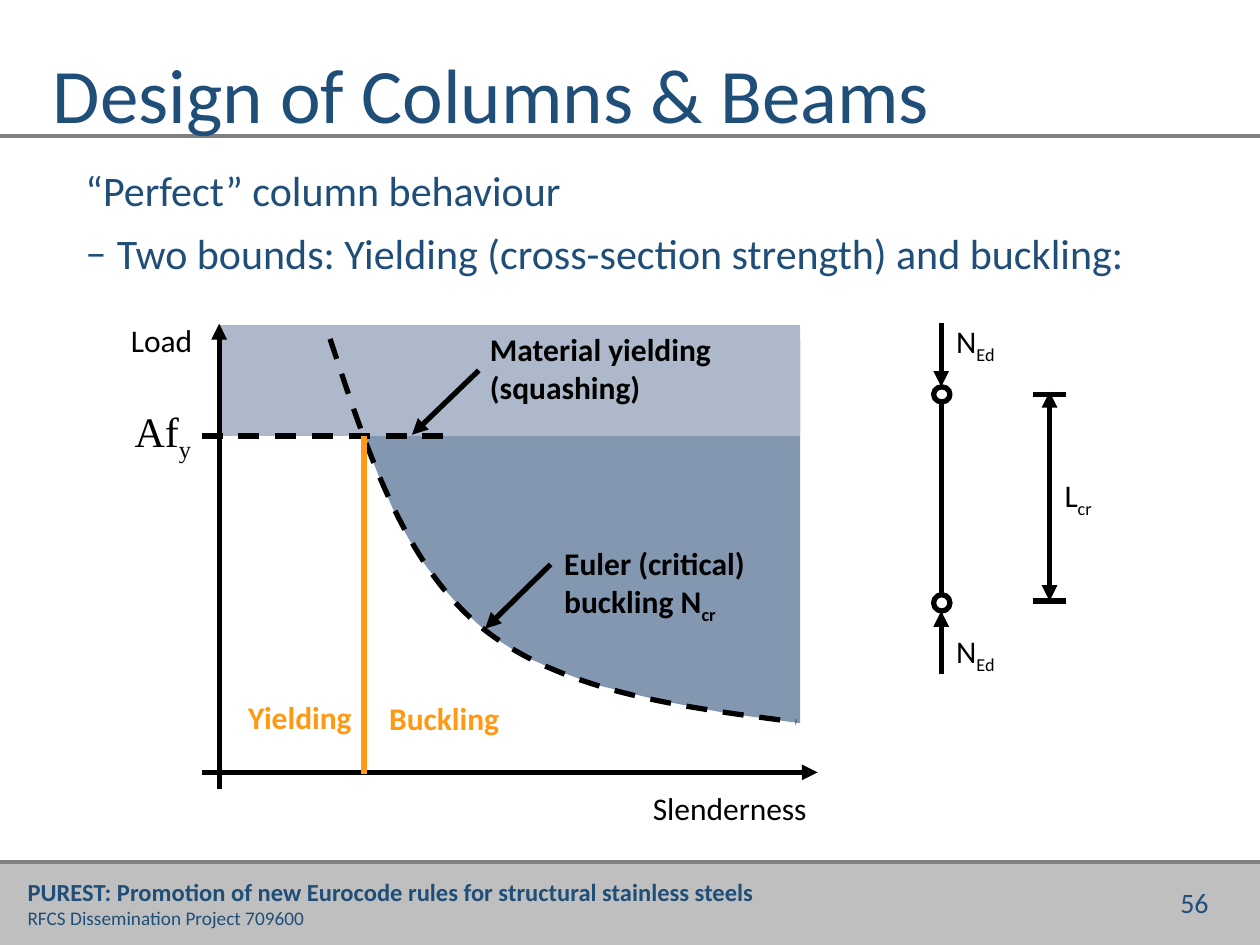
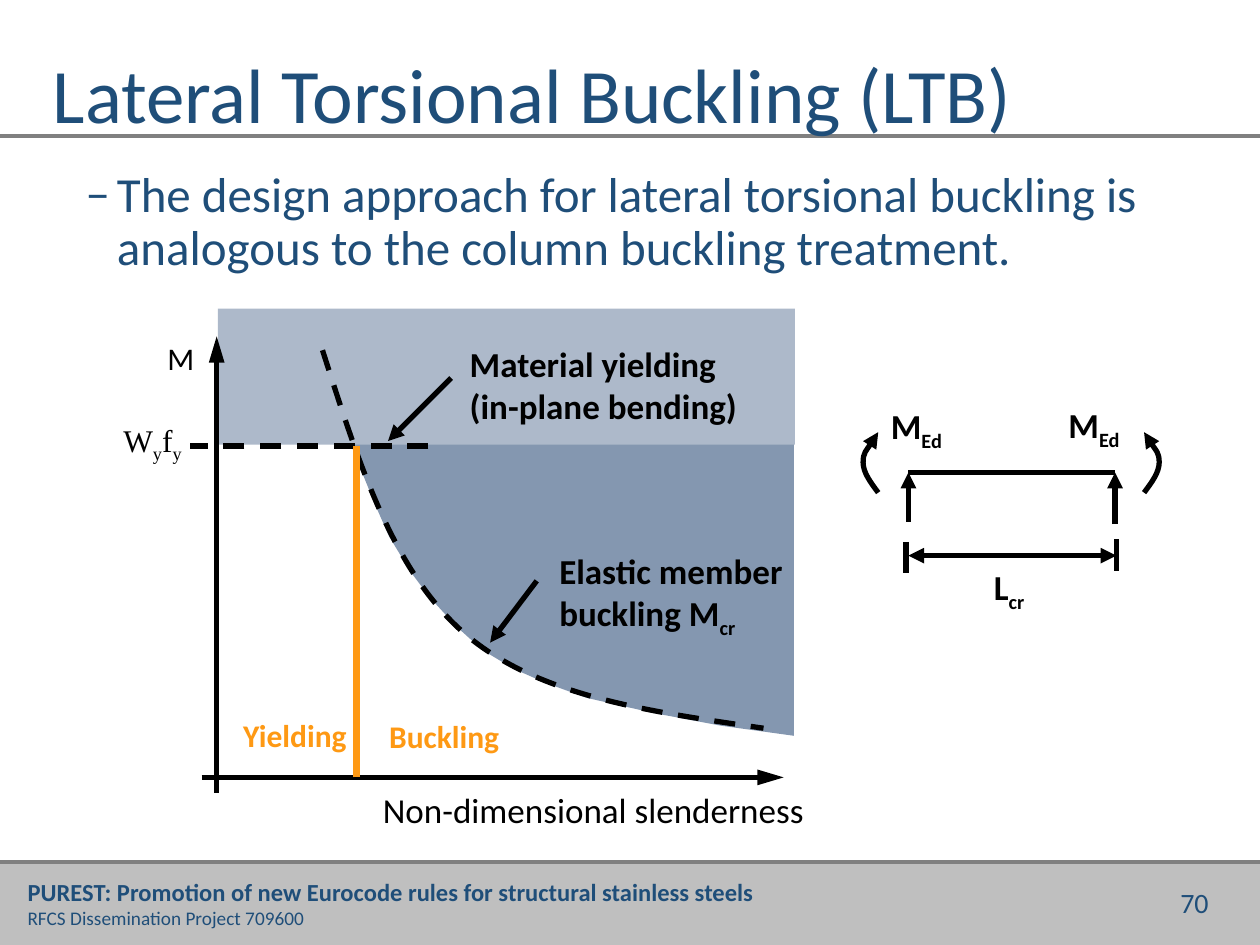
"""Builds two slides on the buckling of columns and beams."""
from pptx import Presentation
from pptx import util as u
from pptx.dml.color import RGBColor
from pptx.enum import dml, shapes, text
from pptx.oxml.ns import qn
from lxml import etree

HUE = {"navy": "1F4E79", "band": "BFBFBF", "rule": "808080", "ink": "000000",
       "deep": "8497B0", "pale": "ADB9CA", "gold": "FE9914"}
LEFT, MID, RIGHT = text.PP_ALIGN.LEFT, text.PP_ALIGN.CENTER, text.PP_ALIGN.RIGHT
SERIF = "Times New Roman"


def say(sl, at, *rows, hue="ink", face="Calibri", side=LEFT, pad=True, wrap=True):
    """Adds a text box; each row is (text, size, bold) and | toggles subscript."""
    frame = sl.shapes.add_textbox(*map(u.Inches, at)).text_frame
    frame.word_wrap = wrap
    if not pad:
        frame.margin_left = frame.margin_top = frame.margin_right = frame.margin_bottom = 0
    for i, (words, size, bold) in enumerate(rows):
        para = frame.add_paragraph() if i else frame.paragraphs[0]
        para.alignment = side
        for j, part in enumerate(words.split("|")):
            run = para.add_run()
            run.text = part
            font = run.font
            font.name, font.size, font.bold = face, u.Pt(size), bold
            font.color.rgb = RGBColor.from_string(HUE[hue])
            if j % 2:
                run._r.get_or_add_rPr().set("baseline", "-25000")
    return frame


def ink(shape, hue="ink", wide=3, kind=""):
    """Styles a line; in kind, - is dashed, < and > are arrowheads, + makes them long."""
    shape.line.color.rgb = RGBColor.from_string(HUE[hue])
    shape.line.width = u.Pt(wide)
    if "-" in kind:
        shape.line.dash_style = dml.MSO_LINE.DASH
    for mark, tag in (("<", "a:headEnd"), (">", "a:tailEnd")):
        if mark in kind:
            etree.SubElement(shape.line._get_or_add_ln(), qn(tag), type="triangle",
                             len="lg" if "+" in kind else "med")
    etree.SubElement(shape._element.spPr, qn("a:effectLst"))


COLUMN = {
    "title": "Design of Columns & Beams", "page": "56", "size": 24, "tall": 1.08,
    "body": [("“Perfect” column behaviour", False),
             ("Two bounds: Yielding (cross-section strength) and buckling:", True)],
    "area": [(2.63, 2.71), (6.35, 2.7), (6.35, 5.74), (5.76, 5.66), (5.24, 5.56),
             (4.71, 5.43), (4.39, 5.31), (4.14, 5.2), (3.89, 5.04), (3.68, 4.85),
             (3.47, 4.61), (3.32, 4.41), (3.15, 4.11), (3.04, 3.86), (2.93, 3.59),
             (2.83, 3.32), (2.74, 3.04)],
    "shade": (1.74, 2.58, 4.61, 0.88),
    "lines": [(1.74, 6.26, 1.74, 2.57, ">"), (1.6, 6.13, 6.49, 6.13, ">"),
              (1.6, 3.46, 3.58, 3.46, "-"), (3.8, 2.94, 3.27, 3.45, ">"),
              (4.37, 4.48, 3.85, 4.99, ">"), (7.47, 3.19, 7.47, 4.72, ""),
              (7.47, 2.56, 7.47, 3.07, ">"), (7.47, 5.35, 7.47, 4.85, ">"),
              (8.2, 3.13, 8.46, 3.13, ""), (8.2, 4.77, 8.46, 4.77, ""),
              (8.33, 3.11, 8.33, 4.77, "<>")],
    "curves": [("-", [(2.62, 2.69), (2.91, 3.57), (3.2, 4.46), (3.81, 4.97),
                      (4.43, 5.48), (5.37, 5.61), (6.32, 5.73)])],
    "pins": [(7.41, 3.07, 0.13, 0.12), (7.41, 4.72, 0.13, 0.13)],
    "notes": [((0.97, 3.17, 0.85, 0.76), "Af|y", 24, False, {"face": SERIF}),
              ((3.53, 6.21, 4.58, 0.51), "Slenderness ", 18, False, {"side": MID}),
              ((3.79, 2.57, 2.38, 0.63), "Material yielding (squashing)", 18, True, {}),
              ((4.38, 4.27, 1.93, 0.64), "Euler (critical) buckling N|cr", 18, True, {}),
              ((7.49, 2.51, 0.83, 0.64), "N|Ed", 18, False, {}),
              ((7.49, 4.97, 0.8, 0.64), "N|Ed", 18, False, {}),
              ((8.35, 3.73, 0.69, 0.63), "L|cr", 18, False, {}),
              ((0.94, 2.5, 0.85, 0.76), "Load", 18, False, {})],
    "split": (2.89, 3.46, 6.14, 3.5), "zones": (1.6, 5.49),
}
BEAM = {
    "title": "Lateral Torsional Buckling (LTB)", "page": "70", "size": 28, "tall": 5.28,
    "body": [("The design approach for lateral torsional buckling is "
              "analogous to the column buckling treatment.", True)],
    "area": [(2.56, 2.89), (6.3, 2.88), (6.3, 5.84), (5.72, 5.76), (5.19, 5.66),
             (4.66, 5.54), (4.33, 5.42), (4.08, 5.31), (3.83, 5.16), (3.62, 4.97),
             (3.41, 4.74), (3.26, 4.54), (3.09, 4.26), (2.98, 4.01), (2.87, 3.74),
             (2.77, 3.49), (2.67, 3.22)],
    "shade": (1.73, 2.45, 4.58, 1.08),
    "lines": [(1.72, 6.29, 1.72, 2.67, ">+"), (1.6, 6.17, 6.22, 6.17, ">+"),
              (3.4, 3.54, 1.51, 3.54, "-"), (3.58, 3, 3.08, 3.5, ">"),
              (4.26, 4.61, 3.89, 5.1, ">"), (7.21, 3.75, 8.85, 3.75, ""),
              (7.21, 4.14, 7.21, 3.75, ">"), (8.85, 4.16, 8.85, 3.75, ">"),
              (7.19, 4.3, 7.19, 4.55, ""), (7.21, 4.41, 8.86, 4.41, "<>"),
              (8.86, 4.28, 8.86, 4.53, "")],
    "curves": [("-", [(2.56, 2.78), (2.84, 3.65), (3.11, 4.53), (3.69, 5.03),
                      (4.27, 5.53), (5.17, 5.65), (6.06, 5.78)])]
              + [(">", [(x, 3.91), (x + d / 2, 3.83), (x + d, 3.75), (x + d, 3.67),
                        (x + d, 3.59), (x + d / 6, 3.47), (x, 3.43)])
                 for x, d in ((6.97, -0.12), (9.08, 0.12))],
    "pins": [],
    "notes": [((1.23, 2.64, 1.15, 0.4), "M", 18, False, {}),
              ((0.88, 3.29, 0.89, 0.75), "W|y|f|y", 18, False, {"face": SERIF}),
              ((3.63, 2.67, 2.4, 0.63), "Material yielding (in-plane bending)", 20, True, {}),
              ((4.34, 4.31, 2.09, 0.63), "Elastic member buckling M|cr", 20, True, {}),
              ((7.79, 4.44, 0.66, 0.63), "L|cr", 20, True, {}),
              ((7.07, 3.21, 0.55, 0.48), "M|Ed", 20, True, {"pad": False}),
              ((8.48, 3.2, 0.47, 0.48), "M|Ed", 20, True, {"pad": False}),
              ((2.94, 6.21, 4.4, 0.5), "Non-dimensional slenderness", 20, False, {})],
    "split": (2.83, 3.54, 6.17, 3.75), "zones": (1.56, 5.63),
}

deck = Presentation()
deck.slide_width, deck.slide_height = u.Inches(10), u.Inches(7.5)

for plan in (COLUMN, BEAM):
    sl = deck.slides.add_slide(deck.slide_layouts[6])
    draw = sl.shapes

    band = draw.add_shape(shapes.MSO_SHAPE.RECTANGLE, *map(u.Inches, (0, 6.84, 10, 0.66)))
    band.fill.solid()
    band.fill.fore_color.rgb = RGBColor.from_string(HUE["band"])
    ink(band, "band", 1)
    for y in (6.84, 1.08):
        ink(draw.add_connector(shapes.MSO_CONNECTOR.STRAIGHT,
                               *map(u.Inches, (0, y, 10, y))), "rule", 2)
    say(sl, (0.12, 6.91, 6.01, 0.52),
        ("PUREST: Promotion of new Eurocode rules for structural stainless steels", 14, True),
        ("RFCS Dissemination Project 709600", 11, False), hue="navy", wrap=False)
    say(sl, (7.44, 6.98, 2.25, 0.4), (plan["page"], 16, False), hue="navy", side=RIGHT)
    head = say(sl, (0.32, 0.4, 9.35, 0.68), (plan["title"], 44, False), hue="navy")
    head.paragraphs[0].line_spacing = 0.9

    body = say(sl, (0.58, 1.3, 8.85, plan["tall"]),
               *[(words, plan["size"], False) for words, _ in plan["body"]], hue="navy")
    for para, (_, dash) in zip(body.paragraphs, plan["body"]):
        para.line_spacing, para.space_before = 0.9, u.Pt(10)
        if dash:
            prop = para._p.get_or_add_pPr()
            prop.set("marL", str(u.Inches(0.25)))
            prop.set("indent", str(u.Inches(-0.25)))
            etree.SubElement(prop, qn("a:buFont"), typeface="Calibri")
            etree.SubElement(prop, qn("a:buChar"), char="‒")

    spots = [(u.Inches(x), u.Inches(y)) for x, y in plan["area"]]
    pen = draw.build_freeform(*spots[0])
    pen.add_line_segments(spots[1:], close=True)
    area = pen.convert_to_shape()
    shade = draw.add_shape(shapes.MSO_SHAPE.RECTANGLE, *map(u.Inches, plan["shade"]))
    for zone, hue in ((area, "deep"), (shade, "pale")):
        zone.fill.solid()
        zone.fill.fore_color.rgb = RGBColor.from_string(HUE[hue])
        zone.line.fill.background()
        zone.shadow.inherit = False

    for *ends, kind in plan["lines"]:
        ink(draw.add_connector(shapes.MSO_CONNECTOR.STRAIGHT, *map(u.Inches, ends)), kind=kind)

    for kind, knots in plan["curves"]:
        spots = [(u.Inches(x), u.Inches(y)) for x, y in knots]
        pen = draw.build_freeform(*spots[0])
        pen.add_line_segments(spots[1:], close=False)
        curve = pen.convert_to_shape()
        legs = list(curve._element.iter(qn("a:lnTo")))
        for i in range(0, len(legs), 3):
            bend = etree.SubElement(legs[i].getparent(), qn("a:cubicBezTo"))
            for leg in legs[i:i + 3]:
                bend.append(leg[0])
                leg.getparent().remove(leg)
        curve.fill.background()
        ink(curve, kind=kind)

    for at in plan["pins"]:
        pin = draw.add_shape(shapes.MSO_SHAPE.OVAL, *map(u.Inches, at))
        pin.fill.background()
        ink(pin)

    for at, words, size, bold, more in plan["notes"]:
        say(sl, at, (words, size, bold), **more)

    x, top, base, wide = plan["split"]
    ink(draw.add_connector(shapes.MSO_CONNECTOR.STRAIGHT,
                           *map(u.Inches, (x, base, x, top))), "gold", wide)
    x, y = plan["zones"]
    say(sl, (x, y, 1.29, 0.4), ("Yielding", 18, True), hue="gold", side=RIGHT)
    say(sl, (2.99, y + 0.01, 1.58, 0.4), ("Buckling", 18, True), hue="gold")

deck.save("out.pptx")
